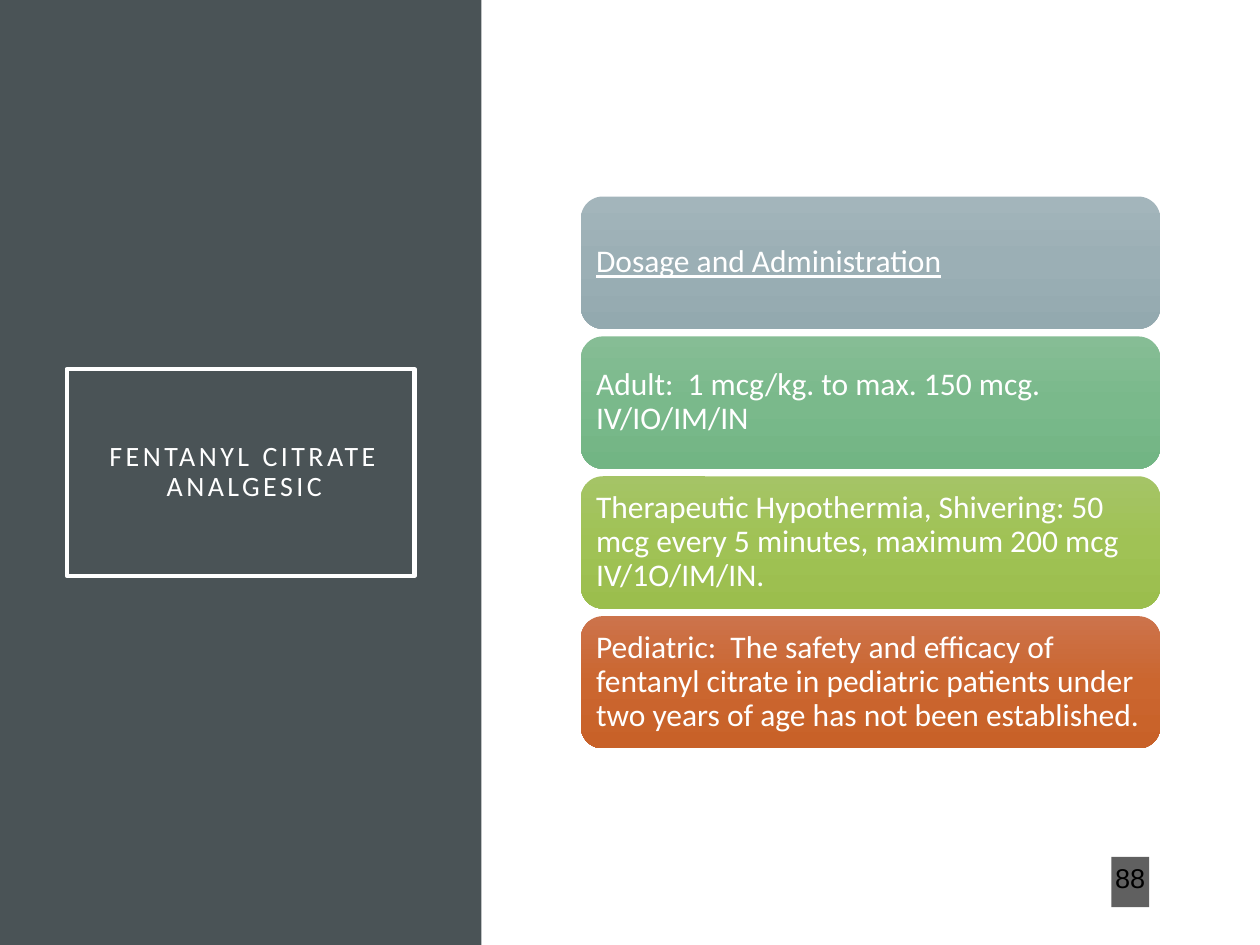
from copy import deepcopy
from typing import NamedTuple

from pptx import Presentation
from pptx.dml.color import RGBColor
from pptx.enum.shapes import MSO_SHAPE
from pptx.enum.text import MSO_ANCHOR, MSO_AUTO_SIZE, PP_ALIGN
from pptx.oxml.ns import qn
from pptx.util import Inches, Pt

WHITE = RGBColor(0xFF, 0xFF, 0xFF)
BLACK = RGBColor(0x00, 0x00, 0x00)
SLATE = RGBColor(0x4A, 0x53, 0x56)
CHARCOAL = RGBColor(0x1D, 0x1D, 0x1D)

CARD_LEFT, CARD_TOP, CARD_WIDTH, CARD_HEIGHT = 4.61, 1.56, 4.6, 1.05
CARD_PITCH = 1.11


class Card(NamedTuple):
    text: str
    gradient: tuple[str, str, str]
    underline: bool = False


CARDS = [
    Card("Dosage and Administration", ("A3B5BB", "9BAFB5", "93A9AF"), True),
    Card("Adult:  1 mcg/kg. to max. 150 mcg. IV/IO/IM/IN",
         ("86BD95", "7AB98B", "72B584")),
    Card("Therapeutic Hypothermia, Shivering: 50 mcg every 5 minutes, "
         "maximum 200 mcg IV/1O/IM/IN.", ("A5C466", "A0C255", "9BBE4D")),
    Card("Pediatric:  The safety and efficacy of fentanyl citrate in pediatric "
         "patients under two years of age has not been established.",
         ("CC734B", "CB662F", "C86128")),
]


def add_block(s, kind, left: float, top: float, width: float, height: float):
    """Add a shape without outline or shadow."""
    sp = s.shapes.add_shape(kind, Inches(left), Inches(top),
                            Inches(width), Inches(height))
    sp.shadow.inherit = False
    sp.line.fill.background()
    return sp


def fill_solid(sp, color: RGBColor) -> None:
    sp.fill.solid()
    sp.fill.fore_color.rgb = color


def set_frame(tf, left: float, top: float, right: float, bottom: float) -> None:
    tf.word_wrap = True
    tf.auto_size = MSO_AUTO_SIZE.NONE
    tf.vertical_anchor = MSO_ANCHOR.MIDDLE
    tf.margin_left, tf.margin_top = Inches(left), Inches(top)
    tf.margin_right, tf.margin_bottom = Inches(right), Inches(bottom)


def add_run(p, text: str, size: float, color: RGBColor, name: str = "Calibri"):
    r = p.add_run()
    r.text = text
    r.font.size, r.font.name = Pt(size), name
    r.font.color.rgb = color
    return r


def fill_gradient(sp, colors: tuple[str, str, str]) -> None:
    """Fill from top to bottom with three evenly spaced stops."""
    sp.fill.gradient()
    sp.fill.gradient_angle = 270
    stops = sp.element.spPr.find(qn("a:gradFill")).find(qn("a:gsLst"))
    stops.insert(1, deepcopy(stops[0]))
    for i, (stop, color) in enumerate(zip(sp.fill.gradient_stops, colors)):
        stop.position = i / 2
        stop.color.rgb = RGBColor.from_string(color)


def add_card(s, card: Card, top: float) -> None:
    sp = add_block(s, MSO_SHAPE.ROUNDED_RECTANGLE,
                   CARD_LEFT, top, CARD_WIDTH, CARD_HEIGHT)
    fill_gradient(sp, card.gradient)
    set_frame(sp.text_frame, 0.07, 0.07, 0.07, 0.07)
    p = sp.text_frame.paragraphs[0]
    p.alignment, p.line_spacing = PP_ALIGN.LEFT, 0.9
    r = add_run(p, card.text, 18, WHITE)
    if card.underline:
        r.font.underline = True


def add_title(s) -> None:
    sp = s.shapes.title
    sp.left, sp.top = Inches(0.53), Inches(2.93)
    sp.width, sp.height = Inches(2.76), Inches(1.64)
    sp.line.color.rgb, sp.line.width = WHITE, Pt(2.5)
    set_frame(sp.text_frame, 0.2, 0.2, 0.14, 0.2)
    p = sp.text_frame.paragraphs[0]
    p.alignment, p.line_spacing = PP_ALIGN.CENTER, 0.9
    runs = [add_run(p, "FENTANYL CITRATE", 16, WHITE)]
    p.add_line_break()
    runs.append(add_run(p, "ANALGESIC", 16, WHITE))
    for r in runs:
        r.font._element.set("spc", "200")


def add_page_number(s) -> None:
    sp = add_block(s, MSO_SHAPE.RECTANGLE, 8.82, 6.8, 0.3, 0.4)
    fill_solid(sp, CHARCOAL)
    color = sp.element.spPr.find(qn("a:solidFill"))[0]
    color.makeelement(qn("a:alpha"))
    alpha = color.makeelement(qn("a:alpha"), {"val": "70000"})
    color.append(alpha)
    set_frame(sp.text_frame, 0.02, 0.05, 0.02, 0.05)
    p = sp.text_frame.paragraphs[0]
    p.alignment, p.line_spacing, p.space_after = PP_ALIGN.CENTER, 0.7, Pt(6)
    add_run(p, "88", 15.5, BLACK, "Arial")


def main() -> None:
    prs = Presentation()
    prs.slide_width, prs.slide_height = Inches(10), Inches(7.5)
    s = prs.slides.add_slide(prs.slide_layouts[5])

    # Left panel, placed behind the title
    panel = add_block(s, MSO_SHAPE.RECTANGLE, 0, 0, 3.82, 7.5)
    fill_solid(panel, SLATE)
    s.shapes.title.element.addprevious(panel.element)

    add_title(s)
    add_page_number(s)

    # Dosage cards
    for i, card in enumerate(CARDS):
        add_card(s, card, CARD_TOP + i * CARD_PITCH)

    prs.save("out.pptx")


if __name__ == "__main__":
    main()
